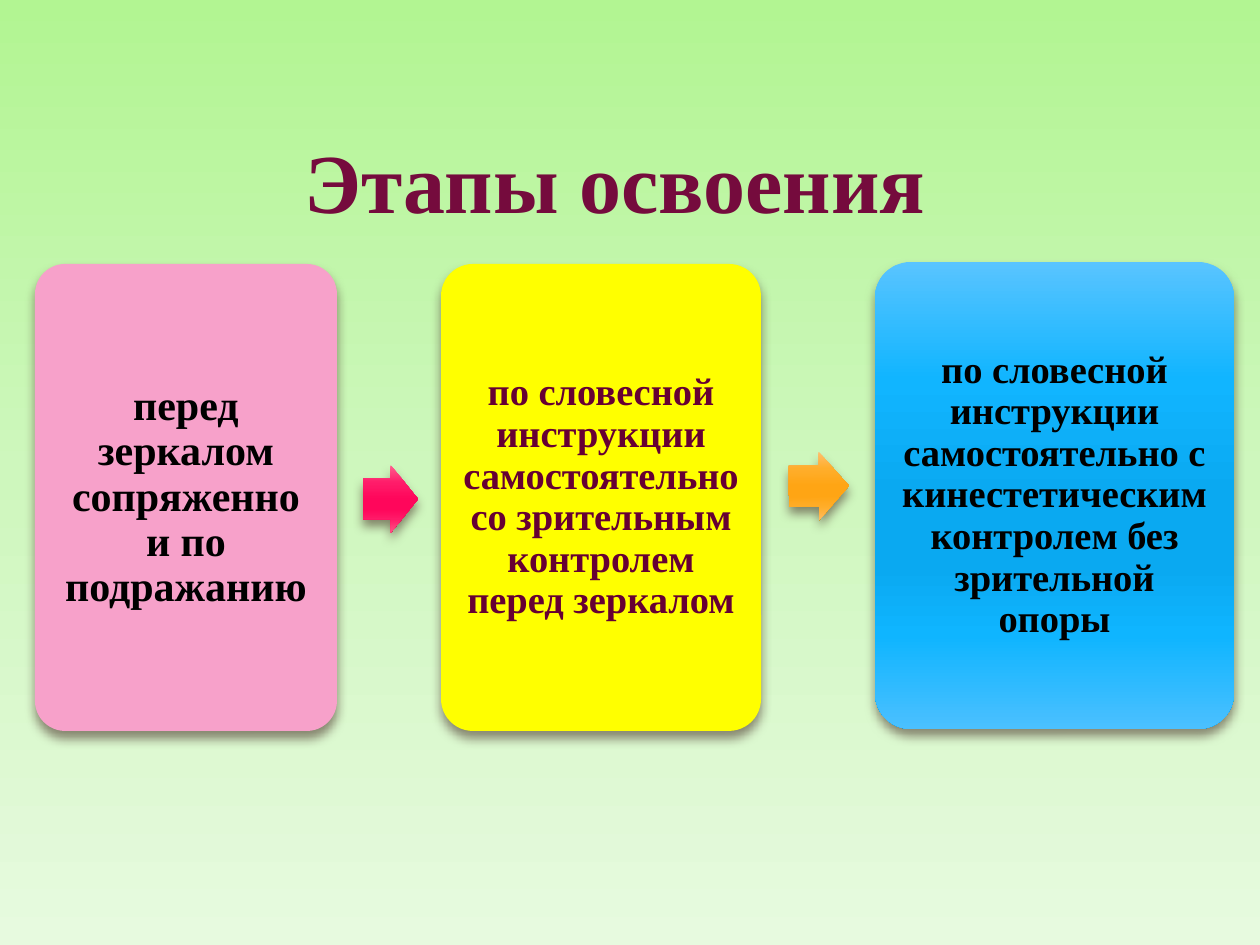
from dataclasses import dataclass

from lxml.etree import SubElement
from pptx import Presentation
from pptx.dml.color import RGBColor
from pptx.enum.shapes import MSO_SHAPE as SHAPE
from pptx.enum.text import MSO_ANCHOR as ANCHOR, MSO_AUTO_SIZE as AUTO, PP_ALIGN as ALIGN
from pptx.oxml.ns import qn
from pptx.util import Pt

PX = 914400 / 126


@dataclass(frozen=True)
class Theme:
    """Colours, type and gradient stops of the slide."""
    font: str = "Times New Roman"
    title_size: int = 48
    title: str = "750B3D"
    black: str = "000000"
    plum: str = "660033"
    pink: str = "F7A1CA"
    yellow: str = "FFFF00"
    shadow: str = "4E3B30"
    back: tuple = ("B2F592", "CEF7BD", "E7FADF")
    blue: tuple = ("59C4FF", "11B5FF", "0AA9F1", "0AA9F1", "0FB5FF", "4BC0FF")
    rose: tuple = ("FF6390", "FF1D6A", "FF065B", "FF065B", "FF1B69", "FF5587")
    orange: tuple = ("FFC170", "FFAE2B", "FFA514", "FFA514", "FFAD29", "FFBC62")
    back_stops: tuple = (0, 50, 100)
    gloss_stops: tuple = (0, 25, 50, 65, 80, 100)


T = Theme()
STAGES = [
    ((35, 264, 302, 467), T.pink, T.black, 24,
     "перед зеркалом сопряженно и по подражанию"),
    ((441, 264, 320, 467), T.yellow, T.plum, 22,
     "по словесной инструкции самостоятельно со зрительным контролем перед зеркалом"),
    ((875, 262, 359, 467), T.blue, T.black, 22,
     "по словесной инструкции самостоятельно с кинестетическим контролем без зрительной опоры"),
]
ARROWS = [((363, 465, 55, 68), T.rose, 0), ((789, 452, 60, 68), T.orange, 359.6)]


def emu(*lengths):
    """Turn px lengths into EMU."""
    return [round(n * PX) for n in lengths]


def set_all(obj, values):
    """Set each attribute named in a dict."""
    for name, value in values.items():
        setattr(obj, name, value)


def add_color(parent, color):
    """Append an RGB colour element and return it."""
    return SubElement(parent, qn("a:srgbClr"), val=color)


def paint(fill, owner, color, stops=T.gloss_stops):
    """Fill with one colour, or top to bottom with a tuple of colours."""
    if isinstance(color, str):
        fill.solid()
        fill.fore_color.rgb = RGBColor.from_string(color)
        return
    fill.gradient()
    fill.gradient_angle = 270
    gs_list = next(owner.iter(qn("a:gsLst")))
    for gs in list(gs_list):
        gs_list.remove(gs)
    for pos, rgb in zip(stops, color):
        add_color(SubElement(gs_list, qn("a:gs"), pos=str(pos * 1000)), rgb)


def add_shadow(sp):
    """Give a shape the soft shadow below it."""
    sp.shadow.inherit = False
    effects = sp.element.spPr.find(qn("a:effectLst"))
    outer = SubElement(effects, qn("a:outerShdw"), blurRad=str(Pt(6)), dist=str(Pt(4)),
                       dir="5400000", rotWithShape="0")
    SubElement(add_color(outer, T.shadow), qn("a:alpha"), val="60000")


def add_block(slide, box, kind, adjustments, color):
    """Place a filled shape with a shadow and no outline."""
    sp = slide.shapes.add_shape(kind, *emu(*box))
    for i, value in enumerate(adjustments):
        sp.adjustments[i] = value
    paint(sp.fill, sp.element.spPr, color)
    sp.line.fill.background()
    add_shadow(sp)
    return sp


def write(tf, text, size, color):
    """Write one centred bold paragraph and return it."""
    p = tf.paragraphs[0]
    p.alignment = ALIGN.CENTER
    r = p.add_run()
    r.text = text
    set_all(r.font, {"name": T.font, "size": Pt(size), "bold": True})
    r.font.color.rgb = RGBColor.from_string(color)
    return p


def add_title(slide, box, text):
    """Place the heading."""
    tf = slide.shapes.add_textbox(*emu(*box)).text_frame
    set_all(tf, {"word_wrap": True, "auto_size": AUTO.SHAPE_TO_FIT_TEXT})
    write(tf, text, T.title_size, T.title)


def add_stage(slide, box, fill, color, size, text):
    """Place one rounded stage card with its text."""
    tf = add_block(slide, box, SHAPE.ROUNDED_RECTANGLE, [0.1], fill).text_frame
    inset = emu(12)[0]
    sides = ("left", "top", "right", "bottom")
    set_all(tf, {f"margin_{side}": inset for side in sides})
    set_all(tf, {"word_wrap": True, "vertical_anchor": ANCHOR.MIDDLE})
    write(tf, text, size, color).line_spacing = 0.9


def add_arrow(slide, box, fill, rotation):
    """Place the arrow between two stages."""
    add_block(slide, box, SHAPE.RIGHT_ARROW, [0.6, 0.5], fill).rotation = rotation


def main():
    """Build and save the slide."""
    prs = Presentation()
    set_all(prs, dict(zip(("slide_width", "slide_height"), emu(1260, 945))))
    s = prs.slides.add_slide(prs.slide_layouts[6])
    fill = s.background.fill
    paint(fill, s.element, T.back, T.back_stops)
    for stage in STAGES:
        add_stage(s, *stage)
    for arrow in ARROWS:
        add_arrow(s, *arrow)
    add_title(s, (213, 123, 804, 115), "Этапы освоения")
    prs.save("out.pptx")


if __name__ == "__main__":
    main()
